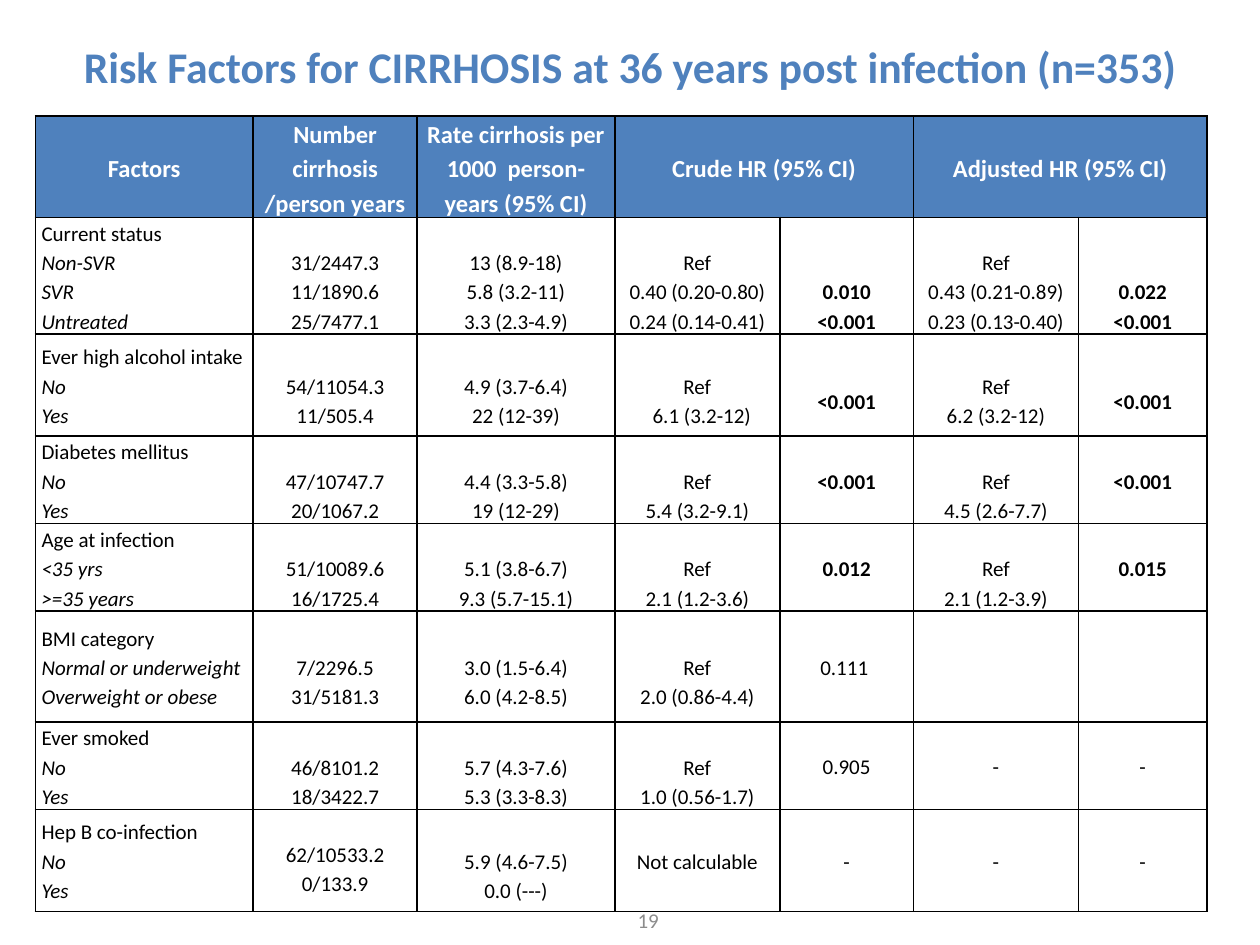
from dataclasses import dataclass

from lxml import etree
from pptx import Presentation
from pptx.dml.color import RGBColor
from pptx.enum.text import MSO_ANCHOR, PP_ALIGN
from pptx.oxml.ns import qn
from pptx.slide import Slide
from pptx.table import Table, _Cell
from pptx.text.text import TextFrame
from pptx.util import Emu, Inches, Pt

LEFT, CENTER = PP_ALIGN.LEFT, PP_ALIGN.CENTER
TOP, MIDDLE = MSO_ANCHOR.TOP, MSO_ANCHOR.MIDDLE
BLANK_LAYOUT = 6
SLIDE_WIDTH, SLIDE_HEIGHT = Inches(10), Inches(7.5)


@dataclass(frozen=True)
class Theme:
    font: str = "Calibri"
    accent: str = "4F81BD"
    ink: str = "000000"
    paper: str = "FFFFFF"
    muted: str = "8C8C8C"
    title_size: int = 25
    header_size: int = 14
    body_size: int = 12
    line_spacing: float = 1.15
    single_line: float = 1.22
    border_width: int = 1
    cell_inset: float = 0.05
    estimate_indent: float = 0.25


@dataclass(frozen=True)
class Box:
    left: float
    top: float
    width: float
    height: float

    def lengths(self) -> tuple[Emu, Emu, Emu, Emu]:
        return across(self.left), down(self.top), across(self.width), down(self.height)


@dataclass(frozen=True)
class Entry:
    lines: tuple[str, ...] = ()
    skipped: int = 0
    bold: bool = False
    anchor: MSO_ANCHOR = MIDDLE
    indented_line: int | None = None


@dataclass(frozen=True)
class Factor:
    name: str
    levels: tuple[str, ...]
    entries: tuple[Entry, ...]


THEME = Theme()
TITLE_BOX = Box(5, 2.8, 90, 8.4)
TABLE_BOX = Box(2.8, 12.27, 93.1, 84)
NUMBER_BOX = Box(39.8, 94.67, 23.3, 5.33)
COLUMN_SHARES = (17.3, 13, 15.7, 13.1, 10.6, 13.1, 10.2)
ROW_SHARES = (8.8, 11.73, 10.8, 8.93, 8.8, 11.73, 8.8, 10.8)
HEADERS = {
    0: "Factors",
    1: "Number cirrhosis /person years",
    2: "Rate cirrhosis per 1000  person-years (95% CI)",
    3: "Crude HR (95% CI)",
    5: "Adjusted HR (95% CI)",
}
MERGED_HEADERS = (3, 5)


def across(share: float) -> Emu:
    return Emu(round(SLIDE_WIDTH * share / 100))


def down(share: float) -> Emu:
    return Emu(round(SLIDE_HEIGHT * share / 100))


def values(*lines: str, anchor: MSO_ANCHOR = MIDDLE, indented_line: int | None = None) -> Entry:
    return Entry(lines, 1, anchor=anchor, indented_line=indented_line)


def significant(*lines: str, skipped: int = 0) -> Entry:
    return Entry(lines, skipped, bold=True)


DASH = Entry(("-",))
FACTORS = (
    Factor("Current status", ("Non-SVR", "SVR", "Untreated"), (
        values("31/2447.3", "11/1890.6", "25/7477.1", anchor=TOP),
        values("13 (8.9-18)", "5.8 (3.2-11)", "3.3 (2.3-4.9)"),
        values("Ref", "0.40 (0.20-0.80)", "0.24 (0.14-0.41)"),
        significant("0.010", "<0.001", skipped=2),
        values("Ref", "0.43 (0.21-0.89)", "0.23 (0.13-0.40)"),
        significant("0.022", "<0.001", skipped=2))),
    Factor("Ever high alcohol intake", ("No", "Yes"), (
        values("54/11054.3", "11/505.4"),
        values("4.9 (3.7-6.4)", "22 (12-39)"),
        values("Ref", "6.1 (3.2-12)", indented_line=1),
        significant("<0.001", skipped=1),
        values("Ref", "6.2 (3.2-12)"),
        significant("<0.001", skipped=1))),
    Factor("Diabetes mellitus", ("No", "Yes"), (
        values("47/10747.7", "20/1067.2", anchor=TOP),
        values("4.4 (3.3-5.8)", "19 (12-29)"),
        values("Ref", "5.4 (3.2-9.1)"),
        significant("<0.001"),
        values("Ref", "4.5 (2.6-7.7)"),
        significant("<0.001"))),
    Factor("Age at infection", ("<35 yrs", ">=35 years"), (
        values("51/10089.6", "16/1725.4", anchor=TOP),
        values("5.1 (3.8-6.7)", "9.3 (5.7-15.1)"),
        values("Ref", "2.1 (1.2-3.6)"),
        significant("0.012"),
        values("Ref", "2.1 (1.2-3.9)"),
        significant("0.015"))),
    Factor("BMI category", ("Normal or underweight", "Overweight or obese"), (
        values("7/2296.5", "31/5181.3"),
        values("3.0 (1.5-6.4)", "6.0 (4.2-8.5)"),
        values("Ref", "2.0 (0.86-4.4)"),
        Entry(("0.111 ",)), Entry(), Entry())),
    Factor("Ever smoked", ("No", "Yes"), (
        values("46/8101.2", "18/3422.7", anchor=TOP),
        values("5.7 (4.3-7.6)", "5.3 (3.3-8.3)"),
        values("Ref", "1.0 (0.56-1.7)"),
        Entry(("0.905",)), DASH, DASH)),
    Factor("Hep B co-infection", ("No", "Yes"), (
        values("62/10533.2", "0/133.9", anchor=TOP),
        values("5.9 (4.6-7.5)", "0.0 (---)"),
        Entry(("Not calculable",)), DASH, DASH, DASH)),
)


def write_line(frame: TextFrame, index: int, text: str, size: int, color: str, *,
               bold: bool = False, italic: bool = False, align: PP_ALIGN = CENTER,
               spacing: float = 1.0) -> None:
    paragraph = frame.add_paragraph() if index else frame.paragraphs[0]
    paragraph.alignment, paragraph.line_spacing = align, spacing
    run = paragraph.add_run()
    run.text = text
    formats = {"name": THEME.font, "size": Pt(size), "bold": bold, "italic": italic}
    for name, value in formats.items():
        setattr(run.font, name, value)
    run.font.color.rgb = RGBColor.from_string(color)


def add_label(slide: Slide, box: Box, text: str, size: int, color: str, bold: bool = False) -> None:
    frame = slide.shapes.add_textbox(*box.lengths()).text_frame
    frame.word_wrap, frame.vertical_anchor = True, MIDDLE
    write_line(frame, 0, text, size, color, bold=bold)


def format_cell(cell: _Cell, fill: str | None = None) -> None:
    formats = {"margin_left": Inches(THEME.cell_inset), "margin_right": Inches(THEME.cell_inset),
               "margin_top": 0, "margin_bottom": 0, "vertical_anchor": MIDDLE}
    for name, value in formats.items():
        setattr(cell, name, value)
    properties = cell._tc.get_or_add_tcPr()
    for side in ("lnL", "lnR", "lnT", "lnB"):
        line = etree.SubElement(properties, qn(f"a:{side}"), w=str(Pt(THEME.border_width)))
        etree.SubElement(etree.SubElement(line, qn("a:solidFill")), qn("a:srgbClr"), val=THEME.ink)
    if fill:
        cell.fill.solid()
        cell.fill.fore_color.rgb = RGBColor.from_string(fill)
    else:
        cell.fill.background()


def fill_entry(cell: _Cell, entry: Entry) -> None:
    line_height = THEME.body_size * THEME.single_line * THEME.line_spacing
    cell.margin_top = Pt(entry.skipped * line_height)
    cell.vertical_anchor = entry.anchor
    for index, text in enumerate(entry.lines):
        indented = index == entry.indented_line
        write_line(cell.text_frame, index, text, THEME.body_size, THEME.ink, bold=entry.bold,
                   align=LEFT if indented else CENTER, spacing=THEME.line_spacing)
        if indented:
            properties = cell.text_frame.paragraphs[index]._p.get_or_add_pPr()
            properties.set("marL", str(Inches(THEME.estimate_indent)))


def fill_factor(table: Table, row: int, factor: Factor) -> None:
    for index, text in enumerate((factor.name, *factor.levels)):
        write_line(table.cell(row, 0).text_frame, index, text, THEME.body_size, THEME.ink,
                   italic=index > 0, align=LEFT, spacing=THEME.line_spacing)
    for column, entry in enumerate(factor.entries, start=1):
        fill_entry(table.cell(row, column), entry)


def add_factor_table(slide: Slide) -> None:
    graphic_frame = slide.shapes.add_table(len(ROW_SHARES), len(COLUMN_SHARES), *TABLE_BOX.lengths())
    table = graphic_frame.table
    table.first_row = table.horz_banding = False
    for column, share in zip(table.columns, COLUMN_SHARES):
        column.width = across(share)
    for index, (row, share) in enumerate(zip(table.rows, ROW_SHARES)):
        row.height = down(share)
        for cell in row.cells:
            format_cell(cell, None if index else THEME.accent)
    graphic_frame.height = down(TABLE_BOX.height)
    for column in MERGED_HEADERS:
        table.cell(0, column).merge(table.cell(0, column + 1))
    for column, text in HEADERS.items():
        write_line(table.cell(0, column).text_frame, 0, text, THEME.header_size, THEME.paper,
                   bold=True, spacing=THEME.line_spacing)
    for row, factor in enumerate(FACTORS, start=1):
        fill_factor(table, row, factor)


def main() -> None:
    presentation = Presentation()
    presentation.slide_width, presentation.slide_height = SLIDE_WIDTH, SLIDE_HEIGHT
    slide = presentation.slides.add_slide(presentation.slide_layouts[BLANK_LAYOUT])
    add_label(slide, TITLE_BOX, "Risk Factors for CIRRHOSIS at 36 years post infection (n=353)",
              THEME.title_size, THEME.accent, bold=True)
    add_factor_table(slide)
    add_label(slide, NUMBER_BOX, "19", THEME.body_size, THEME.muted)
    presentation.save("out.pptx")


if __name__ == "__main__":
    main()
